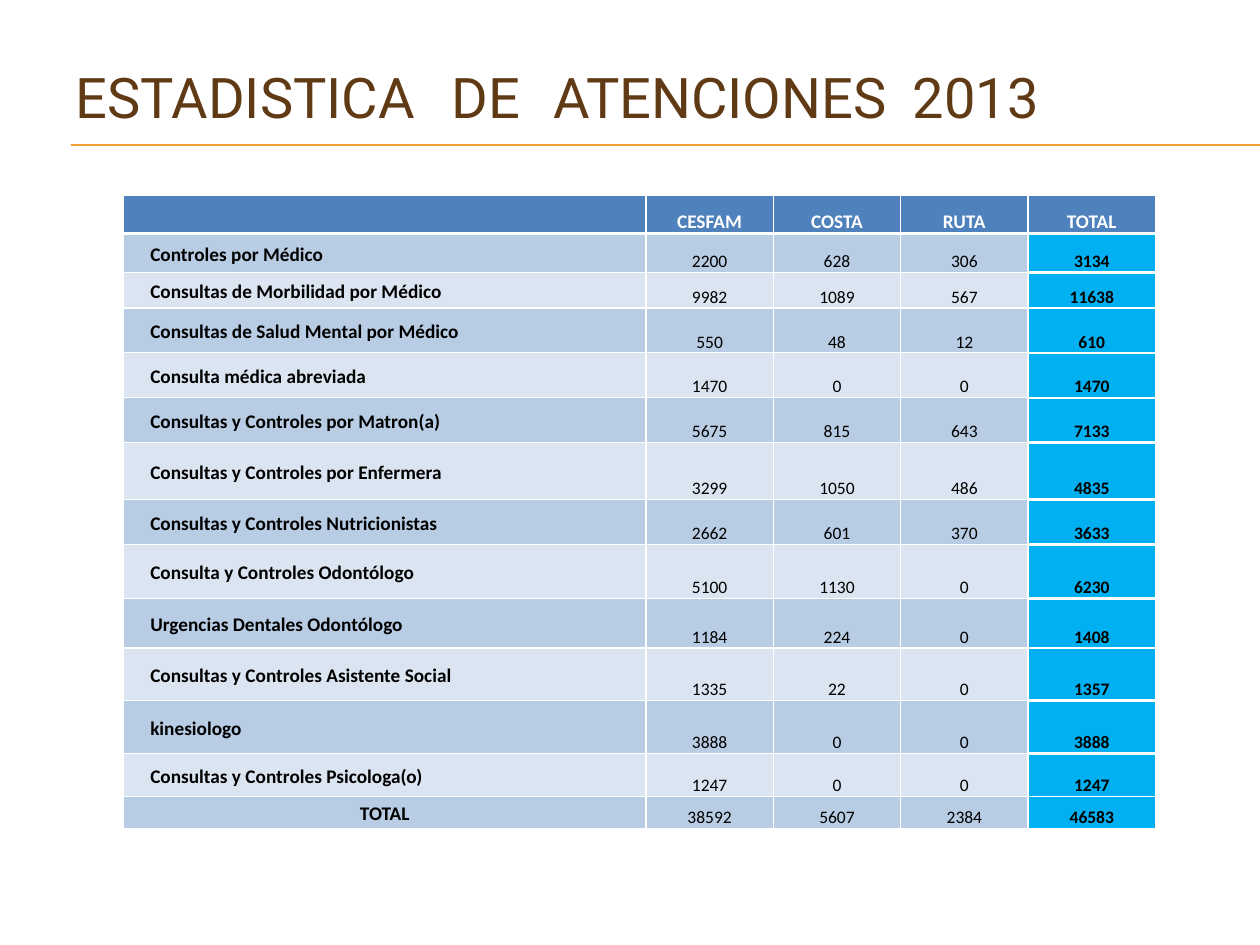
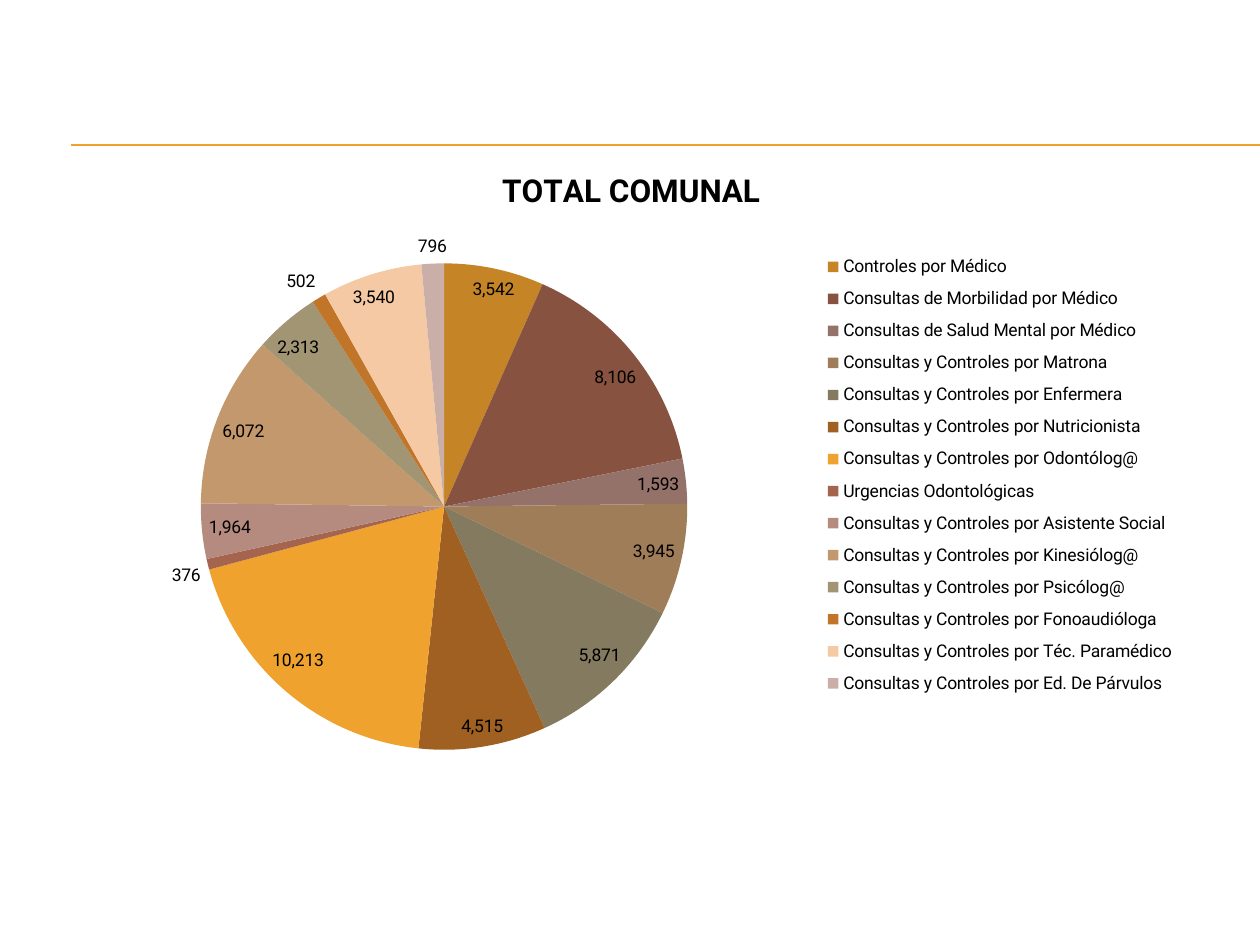
import pptx
import pptx.chart.data
import pptx.dml.color
import pptx.enum.chart
import pptx.enum.shapes
import pptx.enum.text
import pptx.oxml
import pptx.oxml.ns
import pptx.util

Pt = pptx.util.Pt
ALIGN = pptx.enum.text.PP_ALIGN
ANCHOR = pptx.enum.text.MSO_ANCHOR
qn = pptx.oxml.ns.qn

# Content
TITLE_WORDS = ["ESTADISTICA", "DE", "ATENCIONES", "2013"]
PLACES = ["CESFAM", "COSTA", "RUTA"]
ATTENTIONS = [  # service, count per place, row height
    ("Controles por Médico", (2200, 628, 306), 22.3),
    ("Consultas de Morbilidad por Médico", (9982, 1089, 567), 20.1),
    ("Consultas de Salud Mental por Médico", (550, 48, 12), 25.7),
    ("Consulta médica abreviada", (1470, 0, 0), 25.7),
    ("Consultas y Controles por Matron(a)", (5675, 815, 643), 25.7),
    ("Consultas y Controles por Enfermera", (3299, 1050, 486), 32.5),
    ("Consultas y Controles Nutricionistas", (2662, 601, 370), 25.7),
    ("Consulta y Controles Odontólogo", (5100, 1130, 0), 31),
    ("Urgencias Dentales Odontólogo", (1184, 224, 0), 28.1),
    ("Consultas y Controles Asistente Social", (1335, 22, 0), 30.2),
    ("kinesiologo", (3888, 0, 0), 30.2),
    ("Consultas y Controles Psicologa(o)", (1247, 0, 0), 24.6),
]
CHART_TITLE = "TOTAL COMUNAL"
COMMUNE_TOTALS = [  # service, count, slice colour
    ("Controles por Médico", 3542, "C58526"),
    ("Consultas de Morbilidad por Médico", 8106, "875240"),
    ("Consultas de Salud Mental por Médico", 1593, "957269"),
    ("Consultas y Controles por Matrona", 3945, "A07D59"),
    ("Consultas y Controles por Enfermera", 5871, "847A5F"),
    ("Consultas y Controles por Nutricionista", 4515, "9F6021"),
    ("Consultas y Controles por Odontólog@", 10213, "F0A22E"),
    ("Urgencias Odontológicas", 376, "A5644E"),
    ("Consultas y Controles por Asistente Social", 1964, "B58B80"),
    ("Consultas y Controles por Kinesiólog@", 6072, "C3986D"),
    ("Consultas y Controles por Psicólog@", 2313, "A19574"),
    ("Consultas y Controles por Fonoaudióloga", 502, "C17529"),
    ("Consultas y Controles por Téc. Paramédico", 3540, "F5C9A4"),
    ("Consultas y Controles por Ed. De Párvulos", 796, "CAAFA9"),
]

# Shared style
GOLD, BROWN, WHITE, BLACK = "F0A22E", "603A14", "FFFFFF", "000000"
HEADER_BLUE, TOTAL_BLUE = "4F81BD", "00B0F0"
BANDS = ["B8CCE4", "DBE5F1"]
HEADING_FONT, TABLE_FONT = "Roboto", "Calibri"
RULE_HEIGHTS = [82.9, 83.3]
TITLE_TABS = [215, 273, 478.5]
SERVICE_WIDTH, COUNT_WIDTH = 298.4, 72.8
HEADER_HEIGHT, FOOTER_HEIGHT = 22, 18.4


def color(hex_string):
    return pptx.dml.color.RGBColor.from_string(hex_string)


def set_font(font, name, size, hex_string, bold=False):
    font.name, font.size, font.bold = name, Pt(size), bold
    font.color.rgb = color(hex_string)


def add_page(deck):
    """Add a blank page with the gold rule under the title area."""
    page = deck.slides.add_slide(deck.slide_layouts[6])
    for height in RULE_HEIGHTS:
        rule = page.shapes.add_connector(
            pptx.enum.shapes.MSO_CONNECTOR.STRAIGHT, Pt(40.5), Pt(height), Pt(720), Pt(height))
        rule.line.color.rgb = color(GOLD)
        rule.line.width = Pt(0.75)
        properties = rule._element.spPr
        properties.append(properties.makeelement(qn("a:effectLst"), {}))
    return page


def add_title(page):
    box = page.shapes.add_textbox(Pt(36), Pt(21.6), Pt(648), Pt(67))
    frame = box.text_frame
    frame.word_wrap = True
    frame.vertical_anchor = ANCHOR.MIDDLE
    para = frame.paragraphs[0]
    para.text = "\t".join(TITLE_WORDS)
    properties = para._p.get_or_add_pPr()
    stops = properties.makeelement(qn("a:tabLst"), {})
    for position in TITLE_TABS:
        stops.append(stops.makeelement(qn("a:tab"), {"pos": str(Pt(position)), "algn": "l"}))
    properties.append(stops)
    for span in para.runs:
        set_font(span.font, HEADING_FONT, 32, BROWN)


def add_border(cell, side, width):
    properties = cell._tc.get_or_add_tcPr()
    properties.append(pptx.oxml.parse_xml(
        f'<a:{side} xmlns:a="http://schemas.openxmlformats.org/drawingml/2006/main" '
        f'w="{Pt(width)}"><a:solidFill><a:srgbClr val="{WHITE}"/></a:solidFill></a:{side}>'))


def style_cell(cell, row, column, last_row, last_column):
    header, total = row == 0, column == last_column
    service = column == 0

    # Inner borders, heavier under the header and between totals
    def border_width(edge):
        return 1.5 if edge == 1 or (total and edge < last_row) else 1

    for side, inner, width in (
            ("lnL", column > 0, 1),
            ("lnR", column < last_column, 1),
            ("lnT", row > 0, border_width(row)),
            ("lnB", row < last_row, border_width(row + 1))):
        if inner:
            add_border(cell, side, width)

    cell.fill.solid()
    fill = HEADER_BLUE if header else TOTAL_BLUE if total else BANDS[(row - 1) % 2]
    cell.fill.fore_color.rgb = color(fill)
    cell.margin_left = cell.margin_right = Pt(3)
    cell.margin_top = cell.margin_bottom = 0
    cell.vertical_anchor = ANCHOR.MIDDLE if service and not header else ANCHOR.BOTTOM

    para = cell.text_frame.paragraphs[0]
    para.line_spacing = 1.15
    if service and 0 < row < last_row:
        para._p.get_or_add_pPr().set("indent", str(Pt(12.2)))
    else:
        para.alignment = ALIGN.CENTER
    for span in para.runs:
        set_font(span.font, TABLE_FONT, 11 if header or service else 10,
                 WHITE if header else BLACK, header or service or total)


def add_attention_table(page):
    rows = [["", *PLACES, "TOTAL"]]
    rows += [[service, *counts, sum(counts)] for service, counts, height in ATTENTIONS]
    sums = [sum(column) for column in zip(*(counts for service, counts, height in ATTENTIONS))]
    rows.append(["TOTAL", *sums, sum(sums)])
    heights = [HEADER_HEIGHT, *(height for *rest, height in ATTENTIONS), FOOTER_HEIGHT]
    widths = [SERVICE_WIDTH] + [COUNT_WIDTH] * (len(rows[0]) - 1)

    table = page.shapes.add_table(len(rows), len(widths), Pt(70.7), Pt(111.5),
                                  Pt(sum(widths)), Pt(sum(heights))).table
    table.first_row = table.horz_banding = False
    for column, width in zip(table.columns, widths):
        column.width = Pt(width)
    for row_index, (values, height) in enumerate(zip(rows, heights)):
        table.rows[row_index].height = Pt(height)
        for column_index, value in enumerate(values):
            cell = table.cell(row_index, column_index)
            cell.text_frame.text = str(value)
            style_cell(cell, row_index, column_index, len(rows) - 1, len(widths) - 1)


def place_part(part, x, y, width, height, inner=False):
    """Give a chart part a fixed place, in fractions of the chart."""
    layout = part.get_or_add_layout() if hasattr(part, "get_or_add_layout") else part.find(qn("c:layout"))
    if layout is None:
        layout = part.makeelement(qn("c:layout"), {})
        part.insert(0, layout)
    for child in list(layout):
        layout.remove(child)
    manual = layout.makeelement(qn("c:manualLayout"), {})
    layout.append(manual)
    settings = [("layoutTarget", "inner")] if inner else []
    settings += [("xMode", "edge"), ("yMode", "edge"), ("x", x), ("y", y), ("w", width), ("h", height)]
    for name, value in settings:
        manual.append(manual.makeelement(qn(f"c:{name}"), {"val": str(value)}))


def add_commune_pie(page):
    services, counts, slice_colors = zip(*COMMUNE_TOTALS)
    data = pptx.chart.data.CategoryChartData(number_format="#,##0")
    data.categories = services
    data.add_series(CHART_TITLE, counts)
    chart = page.shapes.add_chart(pptx.enum.chart.XL_CHART_TYPE.PIE, Pt(36.7), Pt(82.8),
                                  Pt(648), Pt(356.4), data).chart
    set_font(chart.font, HEADING_FONT, 10, BLACK)

    # Title and legend
    chart.has_title = True
    title = chart.chart_title.text_frame
    title.text = CHART_TITLE
    set_font(title.paragraphs[0].runs[0].font, HEADING_FONT, 18, BLACK, True)
    chart.has_legend = True
    chart.legend.position = pptx.enum.chart.XL_LEGEND_POSITION.RIGHT
    chart.legend.include_in_layout = False
    set_font(chart.legend.font, HEADING_FONT, 10, BLACK)
    place_part(chart.legend._element, 0.66, 0.16, 0.33, 0.74)

    # Slices and values
    plot = chart.plots[0]
    plot.vary_by_categories = True
    for index, slice_color in enumerate(slice_colors):
        fill = plot.series[0].points[index].format.fill
        fill.solid()
        fill.fore_color.rgb = color(slice_color)
    plot.has_data_labels = True
    labels = plot.data_labels
    labels.show_value, labels.show_percentage = True, False
    labels.number_format, labels.number_format_is_linked = "#,##0", False
    labels.position = pptx.enum.chart.XL_LABEL_POSITION.BEST_FIT
    set_font(labels.font, HEADING_FONT, 10, BLACK)
    place_part(chart._chartSpace.chart.plotArea, 0.12, 0.19, 0.43, 0.78, inner=True)


def main():
    deck = pptx.Presentation()
    deck.slide_width, deck.slide_height = Pt(720), Pt(540)

    # Page 1: attentions by place
    page = add_page(deck)
    add_title(page)
    add_attention_table(page)

    # Page 2: commune totals
    add_commune_pie(add_page(deck))
    deck.save("out.pptx")


if __name__ == "__main__":
    main()
